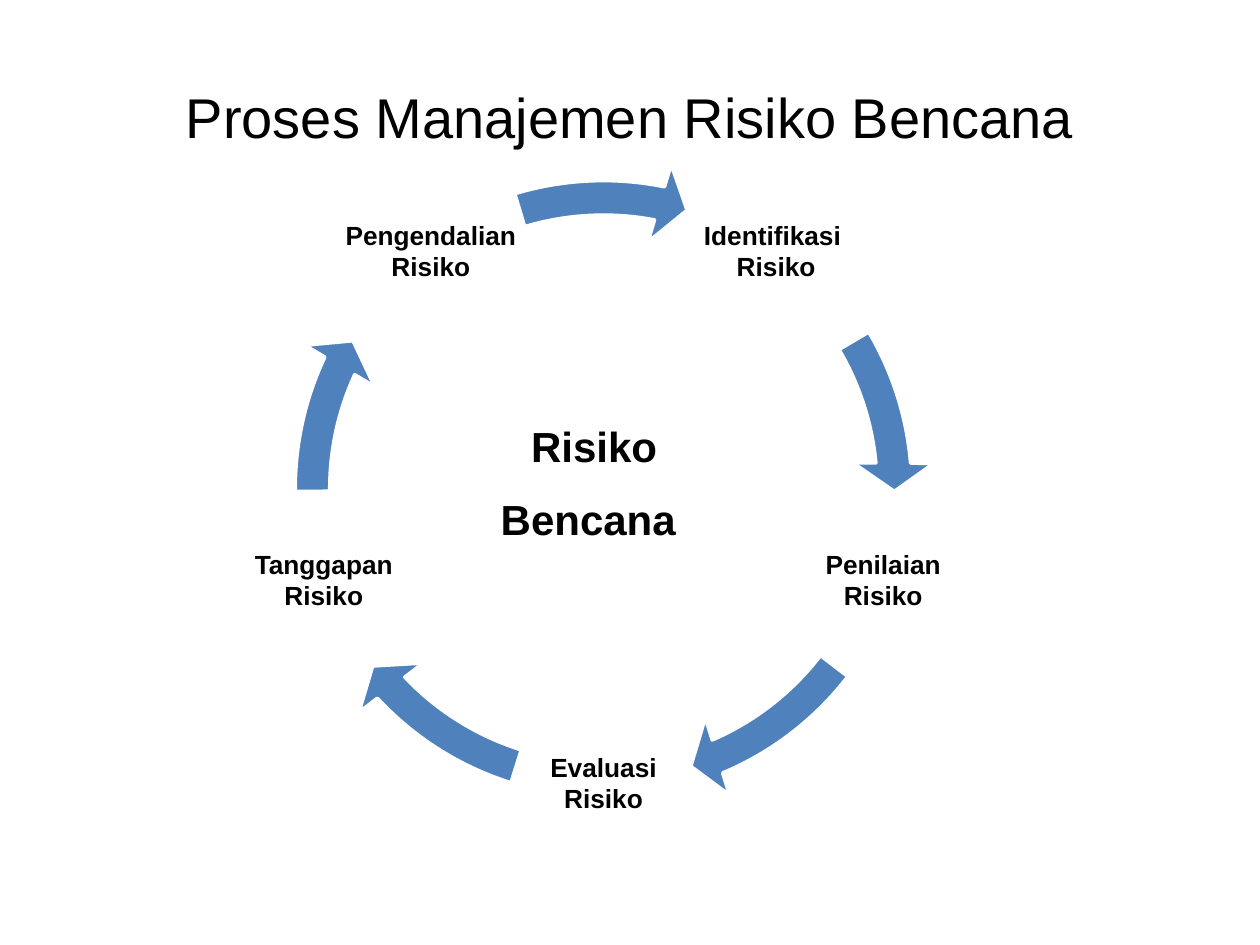
from dataclasses import dataclass

from pptx import Presentation
from pptx.dml.color import RGBColor
from pptx.enum.shapes import MSO_SHAPE
from pptx.enum.text import MSO_ANCHOR, PP_ALIGN
from pptx.util import Pt

ARROW = MSO_SHAPE.CIRCULAR_ARROW
MIDDLE = MSO_ANCHOR.MIDDLE
TOP = MSO_ANCHOR.TOP
CENTER = PP_ALIGN.CENTER
SCALE = 9144


@dataclass(frozen=True)
class Theme:
    font: str = "Arial"
    ink: RGBColor = RGBColor(0, 0, 0)
    blue: RGBColor = RGBColor(0x4F, 0x81, 0xBD)
    white: RGBColor = RGBColor(255, 255, 255)
    title: int = 32
    core: int = 24
    step: int = 15
    edge: int = 2


THEME = Theme()
RING = (216, 125, 526, 526)
SIDE = 140
STEPS = [
    (546, 129, ["Identifikasi ", "Risiko"], 212.95, 197.65),
    (631, 390, ["Penilaian", "Risiko"], 40.16, 22.52),
    (409, 551, ["Evaluasi Risiko"], 82.13, 64.48),
    (187, 390, ["Tanggapan Risiko"], 123.0, 107.7),
    (272, 129, ["Pengendalian", "Risiko"], 168.67, 151.97),
]


def px(n):
    return int(n * SCALE)


def apply(item, form):
    for name, value in form.items():
        setattr(item, name, value)


def add_text(slide, box, lines, size, bold=True, inset=None, anchor=MIDDLE, gap=0):
    frame = slide.shapes.add_textbox(*map(px, box)).text_frame
    apply(frame, {"word_wrap": True, "vertical_anchor": anchor})
    if inset is not None:
        for side in ("left", "top", "right", "bottom"):
            setattr(frame, f"margin_{side}", px(inset))
    for i, line in enumerate(lines):
        para = frame.add_paragraph() if i else frame.paragraphs[0]
        apply(para, {"alignment": CENTER, "space_before": Pt(gap if i else 0)})
        run = para.add_run()
        run.text = line
        apply(run.font, {"name": THEME.font, "size": Pt(size), "bold": bold})
        run.font.color.rgb = THEME.ink


def add_arc(slide, end, start):
    arc = slide.shapes.add_shape(ARROW, *map(px, RING))
    for i, value in enumerate((0.052, 3.355, end, start, 0.061)):
        arc.adjustments[i] = value
    arc.shadow.inherit = False
    arc.fill.solid()
    arc.fill.fore_color.rgb = THEME.blue
    arc.line.color.rgb = THEME.white
    arc.line.width = Pt(THEME.edge)


def main():
    deck = Presentation()
    apply(deck, {"slide_width": px(1000), "slide_height": px(750)})
    slide = deck.slides.add_slide(deck.slide_layouts[6])
    for left, top, lines, end, start in STEPS:
        add_text(slide, (left, top, SIDE, SIDE), lines, THEME.step, inset=2)
        add_arc(slide, end, start)
    add_text(slide, (50, 30, 900, 125), ["Proses Manajemen Risiko Bencana"],
             THEME.title, bold=False)
    add_text(slide, (363, 329, 217, 111), ["Risiko", "Bencana "],
             THEME.core, anchor=TOP, gap=13)
    deck.save("out.pptx")


if __name__ == "__main__":
    main()
